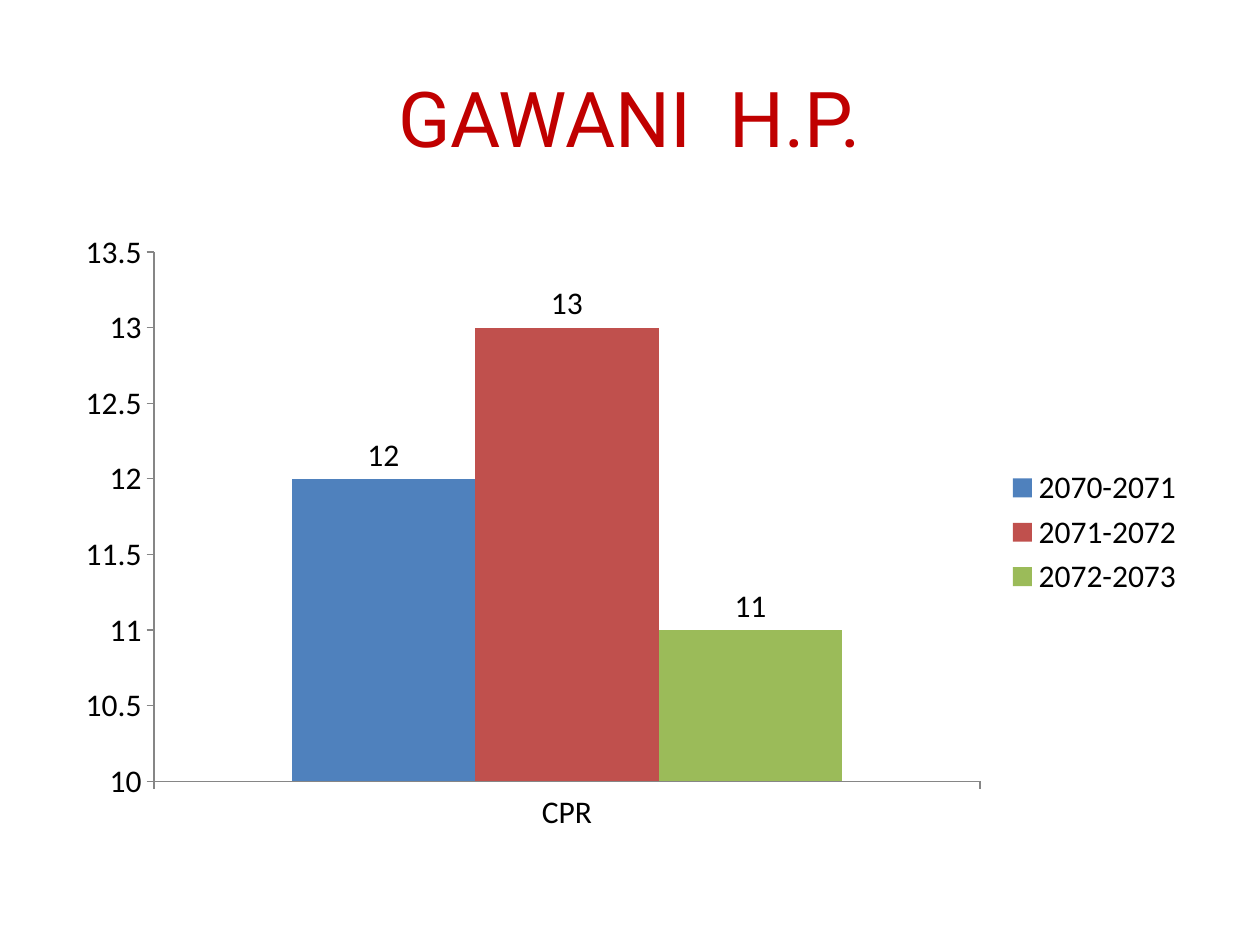
import pptx
import pptx.util
import pptx.chart.data
import pptx.dml.color
import pptx.enum.chart
import pptx.enum.text

Inches = pptx.util.Inches
Pt = pptx.util.Pt

COLORS = {
    "title": "C00000",
    "text": "000000",
    "axis": "868686",
    "2070-2071": "4F81BD",
    "2071-2072": "C0504D",
    "2072-2073": "9BBB59",
}
CASES = {"2070-2071": 12, "2071-2072": 13, "2072-2073": 11}


def rgb(name):
    return pptx.dml.color.RGBColor.from_string(COLORS[name])


def add_text(slide, text, *, left, top, width, height, size, font, color):
    box = slide.shapes.add_textbox(Inches(left), Inches(top), Inches(width), Inches(height))
    frame = box.text_frame
    frame.word_wrap = True
    frame.vertical_anchor = pptx.enum.text.MSO_ANCHOR.MIDDLE
    paragraph = frame.paragraphs[0]
    paragraph.alignment = pptx.enum.text.PP_ALIGN.CENTER
    run = paragraph.add_run()
    run.text = text
    run.font.size = Pt(size)
    run.font.name = font
    run.font.color.rgb = rgb(color)


deck = pptx.Presentation()
deck.slide_width = Inches(10)
deck.slide_height = Inches(7.5)
slide = deck.slides.add_slide(deck.slide_layouts[6])

add_text(slide, "GAWANI  H.P.", left=0.5, top=0.3, width=9, height=1.25,
         size=44, font="Roboto", color="title")

cpr_data = pptx.chart.data.CategoryChartData()
cpr_data.categories = ["CPR"]
for year, value in CASES.items():
    cpr_data.add_series(year, [value])

cpr_chart = slide.shapes.add_chart(
    pptx.enum.chart.XL_CHART_TYPE.COLUMN_CLUSTERED,
    Inches(0.5), Inches(1.75), Inches(9), Inches(4.95), cpr_data).chart
cpr_chart.has_title = False
cpr_chart.font.size = Pt(18)
cpr_chart.font.name = "Calibri"
cpr_chart.font.color.rgb = rgb("text")
cpr_chart.has_legend = True
cpr_chart.legend.position = pptx.enum.chart.XL_LEGEND_POSITION.RIGHT
cpr_chart.legend.include_in_layout = False

value_axis = cpr_chart.value_axis
value_axis.minimum_scale = 10
value_axis.maximum_scale = 13.5
value_axis.major_unit = 0.5
value_axis.has_major_gridlines = False
for axis in (cpr_chart.category_axis, value_axis):
    axis.major_tick_mark = pptx.enum.chart.XL_TICK_MARK.OUTSIDE
    axis.minor_tick_mark = pptx.enum.chart.XL_TICK_MARK.NONE
    axis.format.line.color.rgb = rgb("axis")
    axis.format.line.width = Pt(0.75)

columns = cpr_chart.plots[0]
columns.vary_by_categories = False
columns.gap_width = 150
columns.overlap = 0
for year_series in columns.series:
    year_series.format.fill.solid()
    year_series.format.fill.fore_color.rgb = rgb(year_series.name)
    year_series.data_labels.show_value = True
    year_series.data_labels.position = pptx.enum.chart.XL_LABEL_POSITION.OUTSIDE_END

deck.save("out.pptx")
